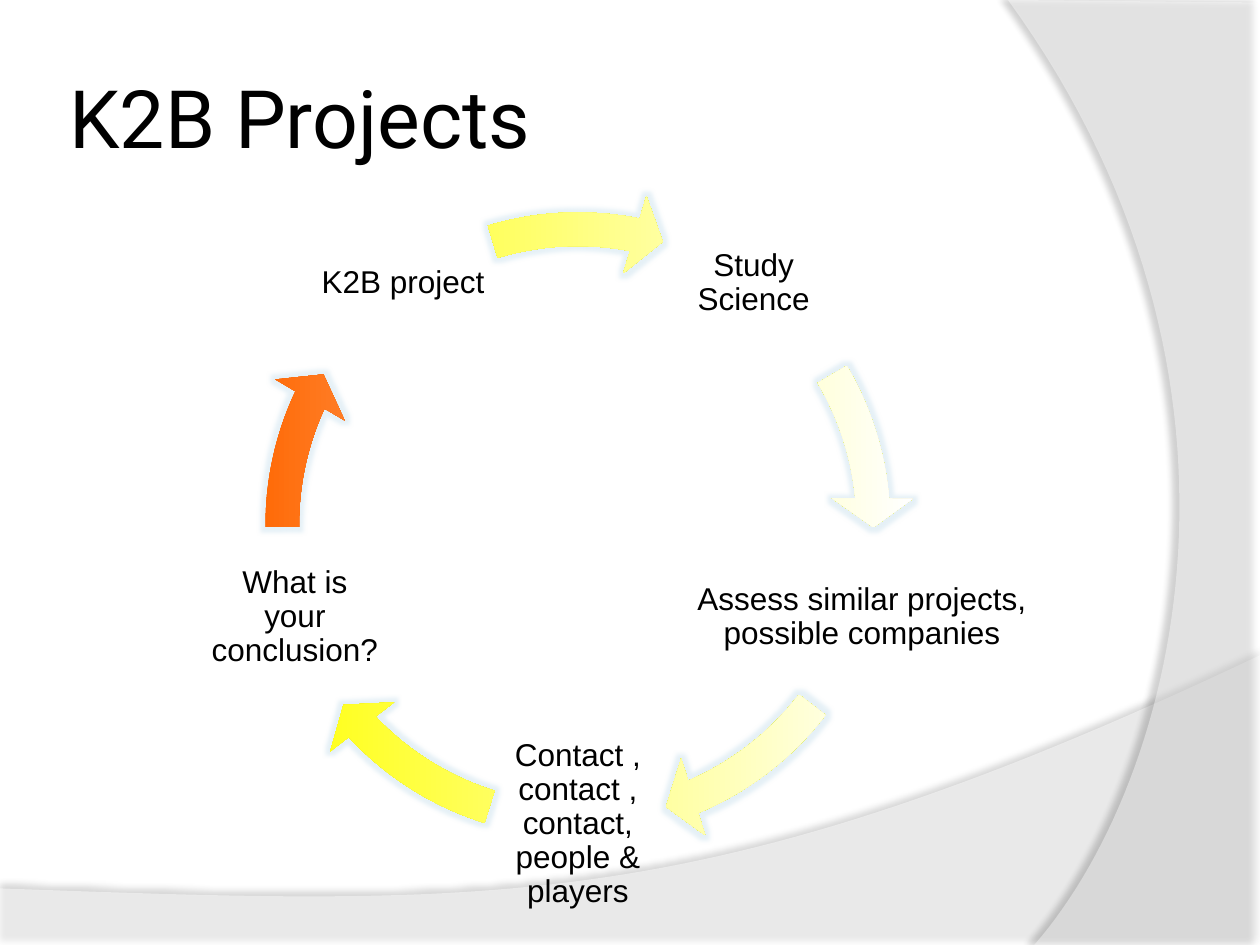
import dataclasses

import lxml.etree
import pptx
import pptx.dml.color
import pptx.enum.shapes
import pptx.enum.text
import pptx.oxml.ns
import pptx.util

Cm = pptx.util.Cm


@dataclasses.dataclass(frozen=True)
class Theme:
    text: str = "000000"
    veil: str = "FFFFFF"
    shade: str = "000000"
    glow: str = "D6E8F2"
    yellow: str = "FFFF00"
    orange: str = "FF6600"
    fade: str = "FFFFFF"
    title_font: str = "Roboto"
    label_font: str = "Arial"
    title_size: int = 46
    label_size: int = 18


def rgb(value):
    return pptx.dml.color.RGBColor.from_string(value)


def add_node(parent, tag, **attributes):
    node = lxml.etree.SubElement(parent, pptx.oxml.ns.qn(tag))
    for key, value in attributes.items():
        node.set(key, str(value))
    return node


def bezier(start, control_a, control_b, end, steps=60):
    points = []
    for step in range(1, steps + 1):
        t = step / steps
        weights = ((1 - t) ** 3, 3 * t * (1 - t) ** 2, 3 * t * t * (1 - t), t ** 3)
        corners = (start, control_a, control_b, end)
        points.append(tuple(sum(w * c[axis] for w, c in zip(weights, corners))
                            for axis in (0, 1)))
    return points


class SlideBuilder:
    def __init__(self, slide, theme):
        self.slide = slide
        self.theme = theme

    def format_text(self, frame, text, font, size, inset):
        frame.text = text
        frame.word_wrap = True
        frame.auto_size = pptx.enum.text.MSO_AUTO_SIZE.NONE
        frame.vertical_anchor = pptx.enum.text.MSO_ANCHOR.MIDDLE
        frame.margin_left = frame.margin_right = Cm(inset)
        frame.margin_top = frame.margin_bottom = Cm(inset)
        paragraph = frame.paragraphs[0]
        for run in paragraph.runs:
            run.font.name = font
            run.font.size = pptx.util.Pt(size)
            run.font.color.rgb = rgb(self.theme.text)
        return paragraph

    def effect(self, shape, tag, color, alpha, **attributes):
        shape.shadow.inherit = False
        effects = shape.element.spPr.find(pptx.oxml.ns.qn("a:effectLst"))
        shade = add_node(add_node(effects, tag, **attributes), "a:srgbClr", val=color)
        add_node(shade, "a:alpha", val=alpha * 1000)

    def title(self, text, left, top, width, height):
        heading = self.slide.shapes.title
        heading.left, heading.top = Cm(left), Cm(top)
        heading.width, heading.height = Cm(width), Cm(height)
        paragraph = self.format_text(heading.text_frame, text, self.theme.title_font,
                                     self.theme.title_size, 0.13)
        paragraph.alignment = pptx.enum.text.PP_ALIGN.LEFT

    def wave(self, corners, curve, opacity, shadow_opacity, distance, direction):
        points = [(Cm(x), Cm(y)) for x, y in corners + bezier(corners[-1], *curve)]
        outline = self.slide.shapes.build_freeform(*points[0])
        outline.add_line_segments(points[1:], close=True)
        shape = outline.convert_to_shape()
        shape.fill.solid()
        shape.fill.fore_color.rgb = rgb(self.theme.veil)
        color = shape.element.spPr.find(".//" + pptx.oxml.ns.qn("a:srgbClr"))
        add_node(color, "a:alpha", val=opacity * 1000)
        shape.line.fill.background()
        self.effect(shape, "a:outerShdw", self.theme.shade, shadow_opacity,
                    blurRad=pptx.util.Pt(4), dist=pptx.util.Pt(distance),
                    dir=direction * 60000, algn="ctr", rotWithShape=0)

    def label(self, text, left, top, width, height=3.61):
        box = self.slide.shapes.add_textbox(Cm(left), Cm(top), Cm(width), Cm(height))
        paragraph = self.format_text(box.text_frame, text, self.theme.label_font,
                                     self.theme.label_size, 0.08)
        paragraph.alignment = pptx.enum.text.PP_ALIGN.CENTER
        paragraph.line_spacing = 0.9

    def cycle_arrow(self, end, start, color, left=4.88, top=3.81, size=13.54):
        arrow = self.slide.shapes.add_shape(
            pptx.enum.shapes.MSO_SHAPE.CIRCULAR_ARROW,
            Cm(left), Cm(top), Cm(size), Cm(size))
        for index, value in enumerate((0.05, 3.36, end, start, 0.06)):
            arrow.adjustments[index] = value
        arrow.fill.gradient()
        arrow.fill.gradient_angle = 0
        for stop, position, tint in zip(arrow.fill.gradient_stops, (0, 1),
                                        (color, self.theme.fade)):
            stop.position = position
            stop.color.rgb = rgb(tint)
        arrow.line.fill.background()
        self.effect(arrow, "a:glow", self.theme.glow, 60, rad=pptx.util.Pt(5))


def main():
    presentation = pptx.Presentation()
    presentation.slide_width, presentation.slide_height = Cm(25.4), Cm(19.05)
    theme = Theme()
    slide = presentation.slides.add_slide(presentation.slide_layouts[5])
    builder = SlideBuilder(slide, theme)

    builder.wave([(0, 17.91), (0, 19.08), (25.4, 19.08), (25.4, 13.21)],
                 [(14.2, 18.52), (9.93, 18.26), (0, 17.91)], 45, 35, 3.5, 270)
    builder.wave([(25.4, 0.05), (25.4, 19.05), (20.85, 19.05)],
                 [(23.75, 15.72), (25.86, 7.62), (20.32, 0)], 40, 45, 4, 180)
    builder.title("K2B Projects", 1.27, 0.76, 20.75, 3.18)

    steps = [
        ("Study Science", 13.39, 3.91, 3.61, 212.95, 197.65, theme.yellow),
        ("Assess similar projects, possible companies", 13.26, 10.64, 8.23,
         40.22, 22.52, theme.yellow),
        ("Contact , contact , contact, people & players", 9.86, 14.81, 3.58,
         82.12, 64.43, theme.yellow),
        ("What is your conclusion?", 4.14, 10.64, 3.61, 122.99, 107.7, theme.orange),
        ("K2B project", 6.32, 3.91, 3.61, 168.67, 151.97, theme.yellow),
    ]
    for text, left, top, width, arrow_end, arrow_start, color in steps:
        builder.label(text, left, top, width)
        builder.cycle_arrow(arrow_end, arrow_start, color)

    presentation.save("out.pptx")


if __name__ == "__main__":
    main()
